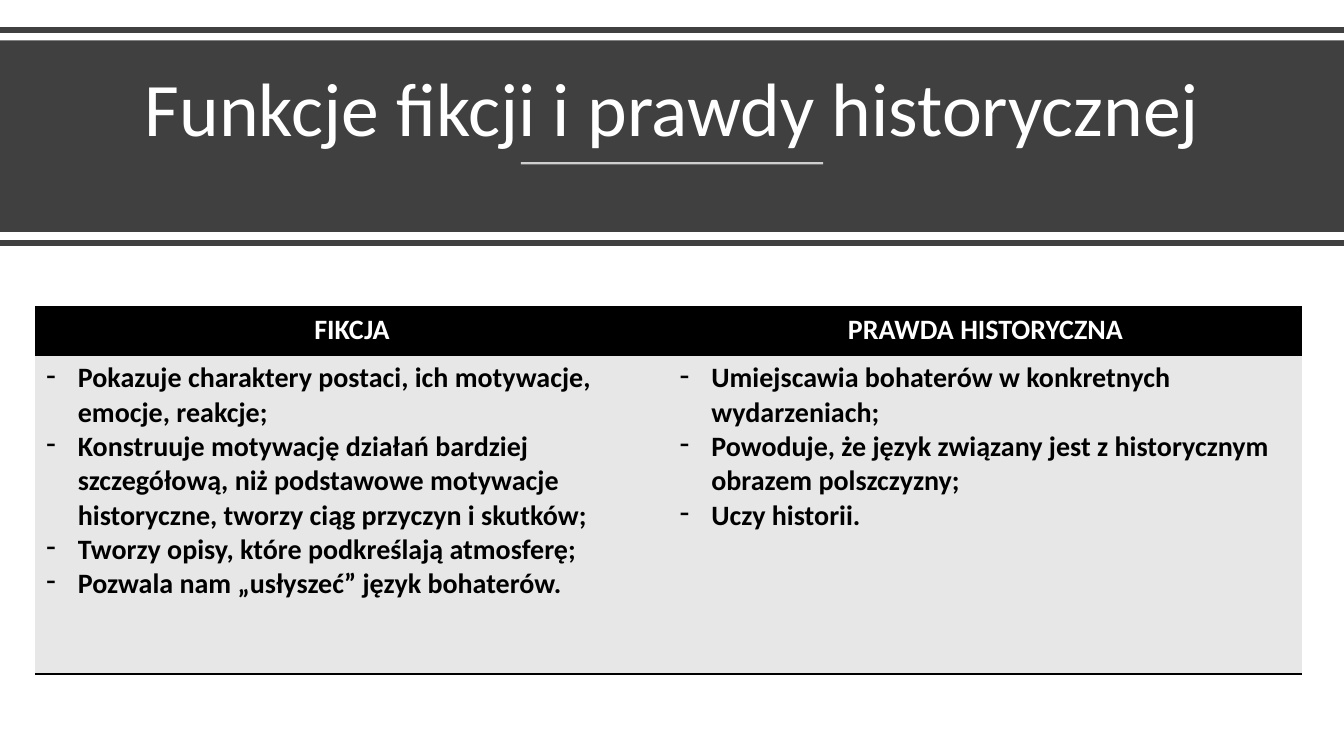
import pptx
import pptx.dml.color
import pptx.enum.shapes
import pptx.enum.text
import pptx.oxml
import pptx.oxml.ns
import pptx.util

Pt = pptx.util.Pt
qn = pptx.oxml.ns.qn
RGB = pptx.dml.color.RGBColor
ALIGN = pptx.enum.text.PP_ALIGN
ANCHOR = pptx.enum.text.MSO_ANCHOR

WHITE = RGB(0xFF, 0xFF, 0xFF)
BLACK = RGB(0, 0, 0)
DARK = RGB(0x40, 0x40, 0x40)
PALE = RGB(0xE7, 0xE7, 0xE7)
WIDE = 960


def write(frame, lines, size=20, color=BLACK, bold=True, align=ALIGN.LEFT,
          space=None, dash=False):
    """Fill a text frame with one paragraph per line, with dash bullets if asked."""
    frame.word_wrap = True
    for i, line in enumerate(lines):
        para = frame.paragraphs[0] if i == 0 else frame.add_paragraph()
        para.alignment = align
        para.line_spacing = space
        run = para.add_run()
        run.text = line
        run.font.name = "Calibri"
        run.font.size = Pt(size)
        run.font.bold = bold
        run.font.color.rgb = color
        if dash:
            props = para._p.get_or_add_pPr()
            props.set("marL", str(Pt(22.5)))
            props.set("indent", str(-Pt(22.5)))
            pptx.oxml.ns  # namespace helpers serve the bullet below
            bullet = props.makeelement(qn("a:buChar"), {"char": "-"})
            props.append(bullet)


def rule(left, right, y, color, width):
    line = slide.shapes.add_connector(
        pptx.enum.shapes.MSO_CONNECTOR.STRAIGHT, Pt(left), Pt(y), Pt(right), Pt(y))
    line.line.color.rgb = color
    line.line.width = Pt(width)
    props = line.element.spPr
    props.append(props.makeelement(qn("a:effectLst"), {}))
    return line


deck = pptx.Presentation()
deck.slide_width, deck.slide_height = Pt(WIDE), Pt(540)
slide = deck.slides.add_slide(deck.slide_layouts[6])

# Title band
rule(0, WIDE, 21.6, DARK, 4)
band = slide.shapes.add_shape(
    pptx.enum.shapes.MSO_SHAPE.RECTANGLE, 0, Pt(28.8), Pt(WIDE), Pt(136.8))
band.shadow.inherit = False
band.fill.solid()
band.fill.fore_color.rgb = DARK
band.line.fill.background()

title = slide.shapes.add_textbox(Pt(41.76), Pt(38.88), Pt(876.96), Pt(73.44))
title.text_frame.vertical_anchor = ANCHOR.BOTTOM
write(title.text_frame, ["Funkcje fikcji i prawdy historycznej"], size=54,
      color=WHITE, bold=False, align=ALIGN.CENTER, space=0.9)

accent = rule(372, 588, 116.64, WHITE, 1.5)
tint = next(accent.element.iter(qn("a:srgbClr")))
tint.append(tint.makeelement(qn("a:alpha"), {"val": "75000"}))
rule(0, WIDE, 173.5, DARK, 4)

# Comparison table
COLUMNS = {
    "FIKCJA": [
        "Pokazuje charaktery postaci, ich motywacje, emocje, reakcje;",
        "Konstruuje motywację działań bardziej szczegółową, niż podstawowe "
        "motywacje historyczne, tworzy ciąg przyczyn i skutków;",
        "Tworzy opisy, które podkreślają atmosferę;",
        "Pozwala nam „usłyszeć” język bohaterów.",
    ],
    "PRAWDA HISTORYCZNA": [
        "Umiejscawia bohaterów w konkretnych wydarzeniach;",
        "Powoduje, że język związany jest z historycznym obrazem polszczyzny;",
        "Uczy historii.",
    ],
}
ROWS = [34.8, 227.2]
frame = slide.shapes.add_table(
    2, 2, Pt(25.2), Pt(219.6), Pt(905.04), Pt(sum(ROWS)))
table = frame.table
table.first_row = table.horz_banding = False
style = next(frame.element.iter(qn("a:tableStyleId")))
style.text = "{2D5ABB26-0587-4C30-8999-92F81FD0307C}"
for row, height in zip(table.rows, ROWS):
    row.height = Pt(height)

for col, (head, points) in enumerate(COLUMNS.items()):
    top, body = table.cell(0, col), table.cell(1, col)
    write(top.text_frame, [head], color=WHITE, align=ALIGN.CENTER)
    write(body.text_frame, points, dash=True)
    for cell, fill, side in ((top, BLACK, "lnT"), (body, PALE, "lnB")):
        cell.margin_left = cell.margin_right = Pt(7.92)
        cell.margin_top = cell.margin_bottom = Pt(3.6)
        cell.fill.solid()
        cell.fill.fore_color.rgb = fill
        edge = pptx.oxml.parse_xml(
            f'<a:{side} {pptx.oxml.ns.nsdecls("a")} w="{Pt(2)}"><a:solidFill>'
            f'<a:srgbClr val="{BLACK}"/></a:solidFill></a:{side}>')
        cell._tc.get_or_add_tcPr().insert(0, edge)

deck.save("out.pptx")
